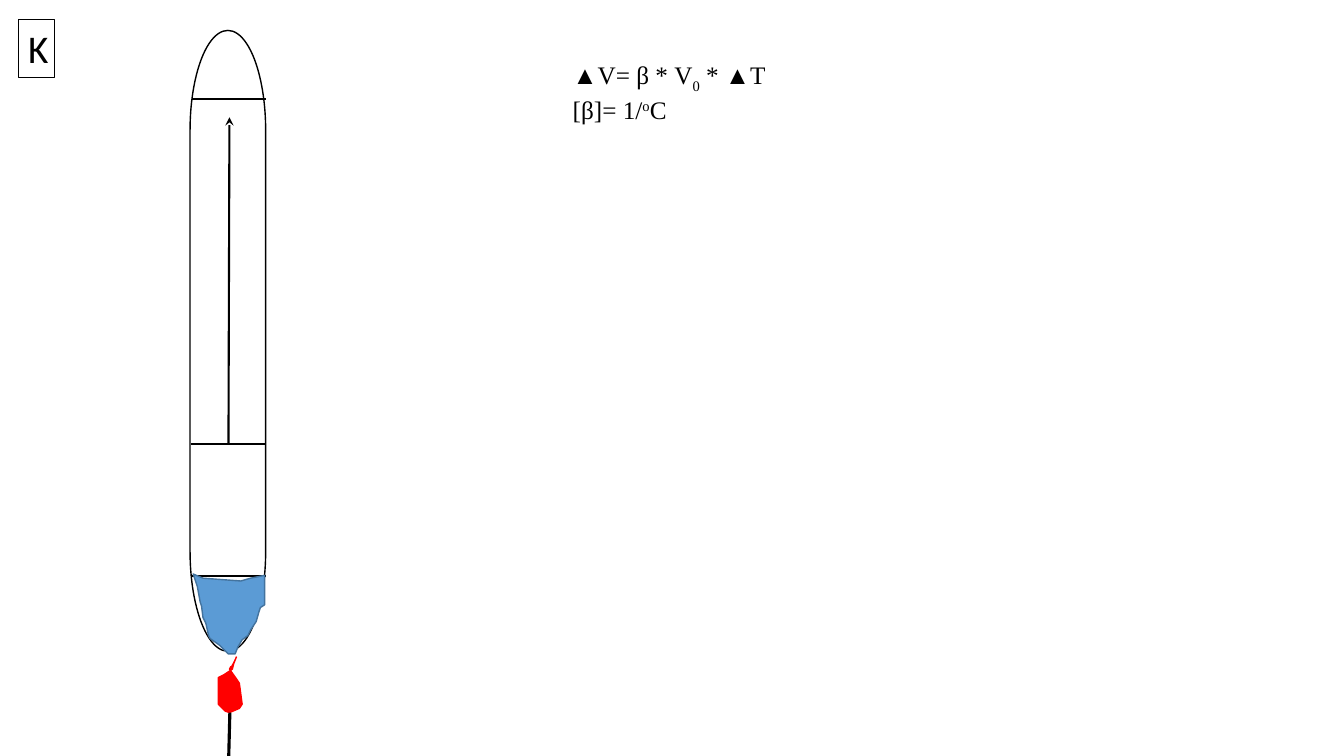
from lxml.etree import SubElement
from pptx import Presentation
from pptx.dml.color import RGBColor
from pptx.enum.shapes import MSO_CONNECTOR, MSO_SHAPE
from pptx.enum.text import MSO_AUTO_SIZE
from pptx.oxml.ns import qn
from pptx.util import Pt

BLACK = RGBColor(0x00, 0x00, 0x00)
WHITE = RGBColor(0xFF, 0xFF, 0xFF)
BLUE = RGBColor(0x5B, 0x9B, 0xD5)
DARK_BLUE = RGBColor(0x43, 0x73, 0x9E)
RED = RGBColor(0xFF, 0x00, 0x00)

WATER = [
    (137.5, 410.4), (141.1, 419), (143.3, 429.8), (144, 432.7), (144.7, 441.4),
    (146.9, 445), (149, 453.6), (150.5, 456.5), (157, 460.8), (163.4, 467.3),
    (168.5, 466.6), (169.9, 462.2), (173.3, 457.2), (177.1, 453.6), (178.6, 450),
    (182.9, 443.5), (185, 437), (185.8, 434.2), (189.4, 432), (189.4, 411.4),
    (179.3, 412.6), (172.1, 414.7), (144.7, 412.6),
]
FLAME = [
    (169.2, 468.7), (167, 473.8), (166.3, 478.1), (162.7, 479.5), (159.8, 482.4),
    (156.2, 483.8), (155.5, 492.5), (156.5, 503), (160.6, 508.3), (164.2, 509),
    (170.6, 506.2), (172.8, 503.3), (171.4, 488.2), (169.2, 484.6), (164.2, 478.1),
    (164.9, 475.9),
]

prs = Presentation()
prs.slide_width, prs.slide_height = Pt(960), Pt(540)
slide = prs.slides.add_slide(prs.slide_layouts[6])
shapes = slide.shapes


def paint(shape, fill, line):
    shape.shadow.inherit = False
    shape.fill.solid()
    shape.fill.fore_color.rgb = fill
    shape.line.color.rgb = line
    shape.line.width = Pt(1)


def add_line(start, end, width):
    line = shapes.add_connector(MSO_CONNECTOR.STRAIGHT, *map(Pt, start + end))
    line.line.color.rgb = BLACK
    line.line.width = Pt(width)
    SubElement(line._element.spPr, qn("a:effectLst"))
    return line


# Tube, its level marks and the rising arrow
tube = shapes.add_shape(MSO_SHAPE.FLOWCHART_TERMINATOR, Pt(-59), Pt(216.5), Pt(443.5), Pt(54))
tube.rotation = 90
paint(tube, WHITE, BLACK)
for left, level in [(137.5, 71), (136.5, 317), (136.5, 411.5)]:
    add_line((left, level), (190, level), 1.5)
rise = add_line((163.2, 317), (163.9, 83.8), 1.5)
SubElement(rise.line._get_or_add_ln(), qn("a:tailEnd"), type="stealth")

# Liquid and burner
for outline, closed, fill, line in [(WATER, True, BLUE, DARK_BLUE), (FLAME, False, RED, RED)]:
    builder = shapes.build_freeform(*outline[0], scale=Pt(1))
    builder.add_line_segments(outline[1:], close=closed)
    paint(builder.convert_to_shape(), fill, line)
add_line((164.2, 509), (163.4, 540), 2.25)

# Expansion formula; each run has its baseline shift in thousandths of a percent
formula = shapes.add_textbox(Pt(402), Pt(39), Pt(273), Pt(51)).text_frame
formula.word_wrap = True
formula.auto_size = MSO_AUTO_SIZE.SHAPE_TO_FIT_TEXT
formula_lines = [
    [("▲V= β * V", 0), ("0", -25000), (" * ▲T", 0)],
    [("[β]= 1/", 0), ("o", 30000), ("C", 0)],
]
formula.add_paragraph()
for paragraph, pieces in zip(formula.paragraphs, formula_lines):
    paragraph.font.name = "Times New Roman"
    paragraph.font.size = Pt(18)
    paragraph.font.color.rgb = BLACK
    for text, baseline in pieces:
        run = paragraph.add_run()
        run.text = text
        if baseline:
            run.font._element.set("baseline", str(baseline))

# Boxed letter
letter = shapes.add_textbox(Pt(13), Pt(14), Pt(26), Pt(41.2))
letter.line.color.rgb = BLACK
letter.line.width = Pt(0.75)
letter.text_frame.word_wrap = False
letter.text_frame.auto_size = MSO_AUTO_SIZE.SHAPE_TO_FIT_TEXT
letter.text_frame.text = "K"
letter_font = letter.text_frame.paragraphs[0].font
letter_font.name = "Calibri"
letter_font.size = Pt(28)
letter_font.color.rgb = BLACK

prs.save("out.pptx")
